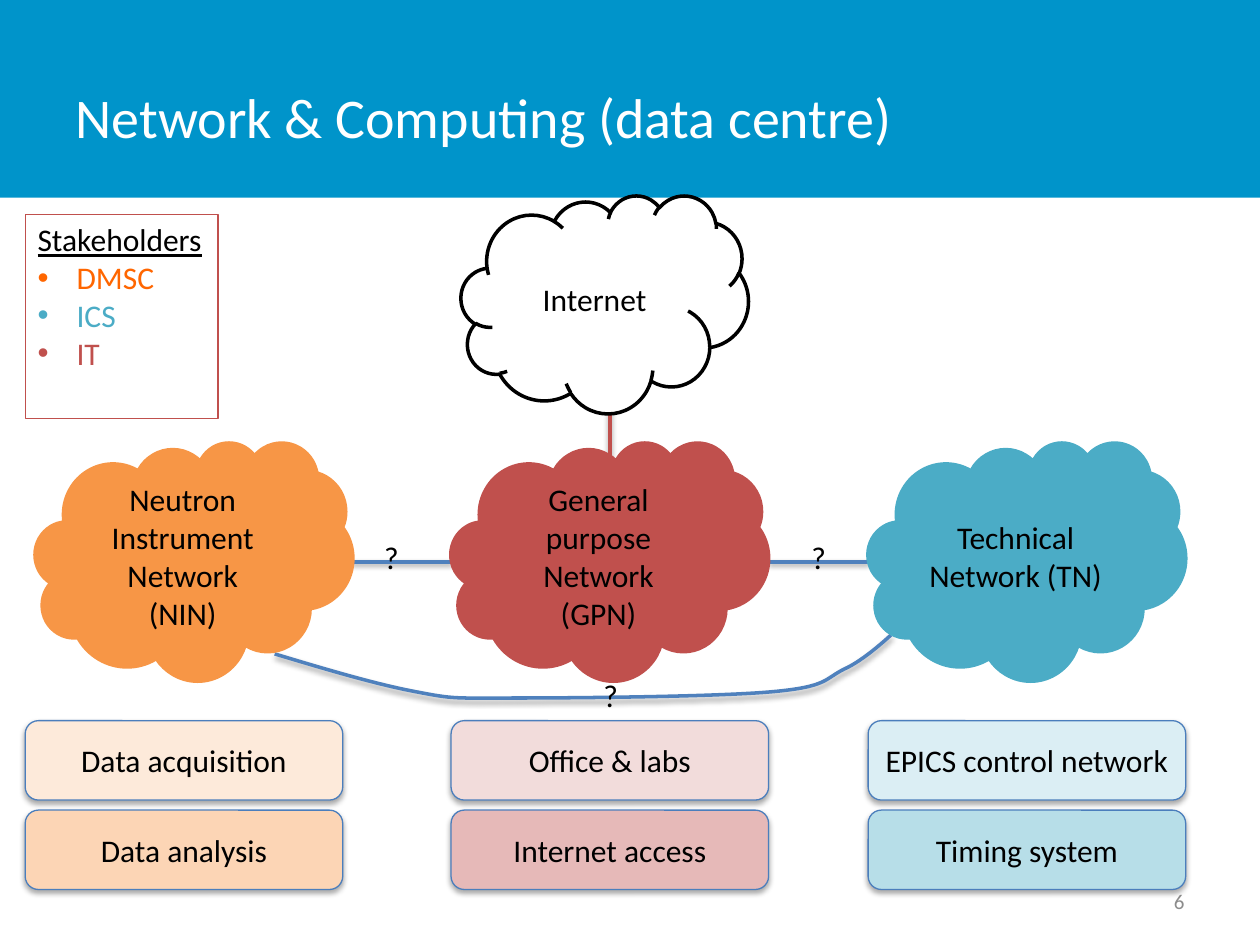
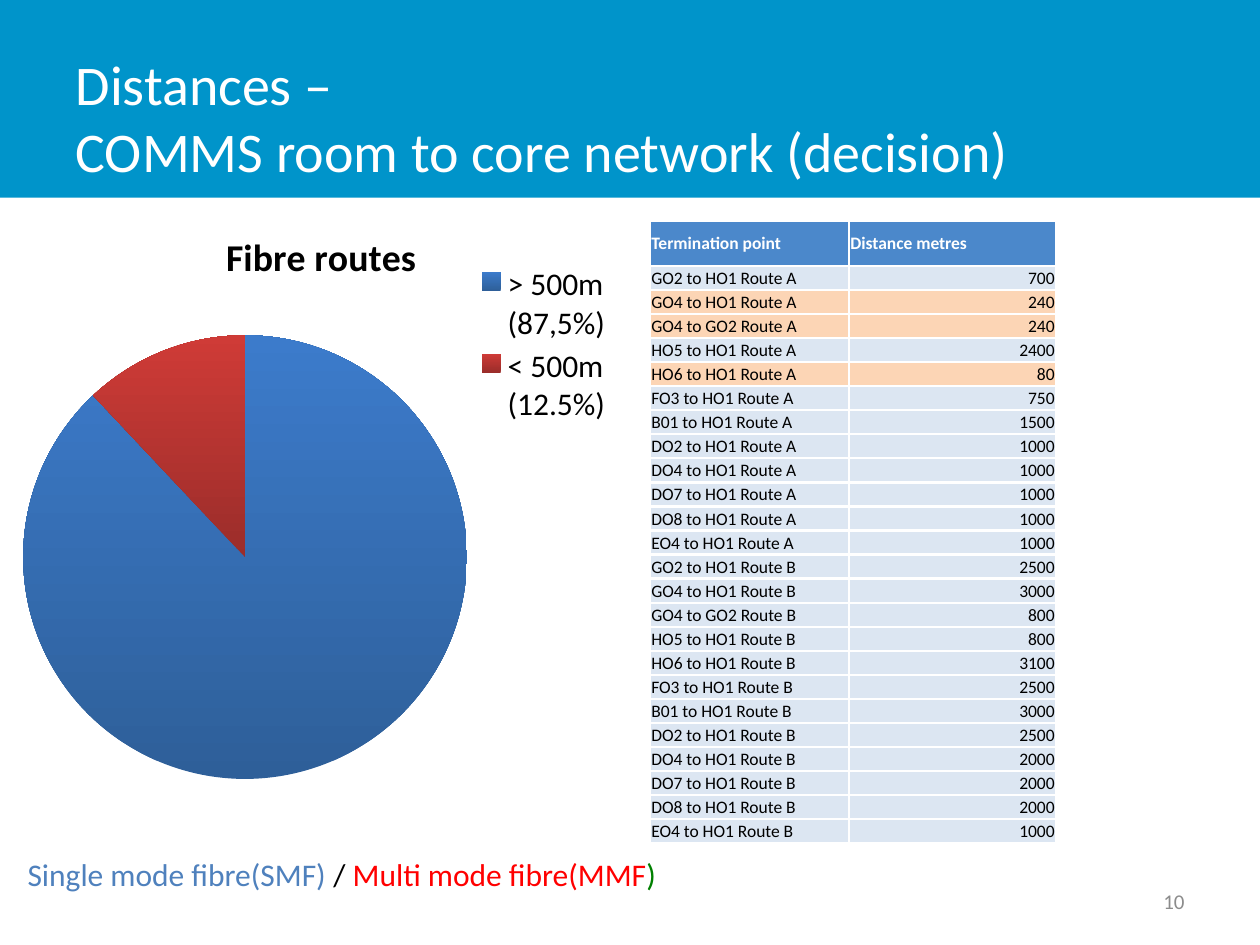
"""Build two slides on network zones and fibre distances."""
import pptx
import pptx.chart.data
import pptx.dml.color
import pptx.enum.chart
import pptx.enum.shapes
import pptx.enum.text
import pptx.oxml
import pptx.oxml.ns
import pptx.util
from lxml import etree

ALIGN = pptx.enum.text.PP_ALIGN
MIDDLE = pptx.enum.text.MSO_ANCHOR.MIDDLE
SHAPE = pptx.enum.shapes.MSO_SHAPE
STRAIGHT = pptx.enum.shapes.MSO_CONNECTOR.STRAIGHT
qn = pptx.oxml.ns.qn
BLACK, WHITE, GREY, BAND = "000000", "FFFFFF", "8C8C8C", "0094CA"
ORANGE, RED, TEAL, BLUE = "F79646", "C0504D", "4BACC6", "4F81BD"


def tint(shade):
    """Turn a hex string into a colour."""
    return pptx.dml.color.RGBColor.from_string(shade)


def write(para, text, shade=BLACK, size=18, bold=False, underline=False):
    """Add one formatted run to a paragraph."""
    span = para.add_run()
    span.text = text
    span.font.name = "Calibri"
    span.font.size = pptx.util.Pt(size)
    span.font.color.rgb = tint(shade)
    span.font.bold = bold
    span.font.underline = underline


deck = pptx.Presentation()
deck.slide_width = pptx.util.Inches(10)
deck.slide_height = pptx.util.Inches(7.5)
column = deck.slide_width // 1000
row = deck.slide_height // 750
layout = deck.slide_layouts.get_by_name("Title Only")

pages = []
for title_lines, number in [
    (["Network & Computing (data centre)"], "6"),
    (["Distances –", "COMMS room to core network (decision)"], "10"),
]:
    page = deck.slides.add_slide(layout)
    pages.append(page)
    title = page.shapes.title
    title.left, title.top = 50 * column, 30 * row
    title.width, title.height = 781 * column, 125 * row
    title.text_frame.vertical_anchor = MIDDLE
    para = title.text_frame.paragraphs[0]
    para.alignment = ALIGN.LEFT
    for index, line in enumerate(title_lines):
        if index:
            para.add_line_break()
        write(para, line, WHITE, 32)
    box = page.shapes.add_textbox(717 * column, 695 * row, 233 * column, 40 * row)
    box.text_frame.word_wrap = True
    box.text_frame.vertical_anchor = MIDDLE
    box.text_frame.paragraphs[0].alignment = ALIGN.RIGHT
    write(box.text_frame.paragraphs[0], number, GREY, 12)
network, distances = pages

band = network.shapes.add_shape(SHAPE.RECTANGLE, 0, 0, deck.slide_width, 157 * row)
band.shadow.inherit = False
band.fill.solid()
band.fill.fore_color.rgb = tint(BAND)
band.line.fill.background()
layout.shapes._spTree.insert(2, band._element)

shadowed = []
for x1, y1, x2, y2, shade in [
    (279, 446, 359, 446, BLUE),
    (484, 312, 484, 362, RED),
    (690, 446, 610, 446, BLUE),
]:
    link = network.shapes.add_connector(STRAIGHT, x1 * column, y1 * row, x2 * column, y2 * row)
    link.line.color.rgb = tint(shade)
    link.line.width = pptx.util.Pt(2)
    shadowed.append((link, 20000, 38000))

bends = [
    (258, 531), (298, 543), (330, 549), (361, 555), (360, 554), (407, 554),
    (454, 554), (569, 553), (613, 549), (657, 545), (654, 539), (670, 531),
    (686, 524), (707, 504), (707, 504),
]
builder = network.shapes.build_freeform(218, 519, scale=(column, row))
builder.add_line_segments(bends, close=False)
detour = builder.convert_to_shape()
detour.fill.background()
detour.line.color.rgb = tint(BLUE)
detour.line.width = pptx.util.Pt(2)
shadowed.append((detour, 20000, 38000))
segments = list(detour._element.iter(qn("a:lnTo")))
outline = segments[0].getparent()
for start in range(0, len(segments), 3):
    bezier = etree.SubElement(outline, qn("a:cubicBezTo"))
    for segment in segments[start:start + 3]:
        bezier.append(segment[0])
        outline.remove(segment)

clouds = [(366, 155, 228, 173, WHITE, BLACK, ["Internet"])]
zone_boxes = []
for cloud_left, box_left, shade, name, uses in [
    (358, 358, RED, ["General purpose Network", "(GPN)"],
     [("Office & labs", "F2DCDB"), ("Internet access", "E6B9B8")]),
    (28, 20, ORANGE, ["Neutron Instrument Network (NIN)"],
     [("Data acquisition", "FDEADA"), ("Data analysis", "FCD5B5")]),
    (689, 689, TEAL, ["Technical Network (TN)"],
     [("EPICS control network", "DBEEF4"), ("Timing system", "B7DEE8")]),
]:
    clouds.append((cloud_left, 351, 252, 189, shade, shade, name))
    for level, (use, pale) in enumerate(uses):
        zone_boxes.append((box_left, 572 + 71 * level, 252, 63, pale, "4B7EBC", [use]))

for kind, weight, items in [(SHAPE.CLOUD, 2, clouds), (SHAPE.ROUNDED_RECTANGLE, 0.75, zone_boxes)]:
    for left, top, width, height, fill, edge, lines in items:
        box = network.shapes.add_shape(kind, left * column, top * row, width * column, height * row)
        box.fill.solid()
        box.fill.fore_color.rgb = tint(fill)
        box.line.color.rgb = tint(edge)
        box.line.width = pptx.util.Pt(weight)
        if kind == SHAPE.CLOUD:
            box.shadow.inherit = False
        else:
            shadowed.append((box, 23000, 35000))
        frame = box.text_frame
        frame.word_wrap = True
        frame.vertical_anchor = MIDDLE
        for index, line in enumerate(lines):
            para = frame.add_paragraph() if index else frame.paragraphs[0]
            para.alignment = ALIGN.CENTER
            write(para, line)

for item, drop, opacity in shadowed:
    effects = etree.SubElement(item._element.spPr, qn("a:effectLst"))
    shadow = etree.SubElement(effects, qn("a:outerShdw"), blurRad="40000", dist=str(drop),
                              dir="5400000", rotWithShape="0")
    shade = etree.SubElement(shadow, qn("a:srgbClr"), val=BLACK)
    etree.SubElement(shade, qn("a:alpha"), val=str(opacity))

stakeholders = network.shapes.add_textbox(20 * column, 170 * row, 153 * column, 162 * row)
stakeholders.line.color.rgb = tint(RED)
stakeholders.line.width = pptx.util.Pt(0.75)
frame = stakeholders.text_frame
frame.word_wrap = False
write(frame.paragraphs[0], "Stakeholders", underline=True)
for name, shade in [("DMSC", "FF6600"), ("ICS", TEAL), ("IT", RED)]:
    para = frame.add_paragraph()
    properties = para._p.get_or_add_pPr()
    properties.set("marL", str(31 * column))
    properties.set("indent", str(-31 * column))
    etree.SubElement(properties, qn("a:buFont"), typeface="Arial")
    etree.SubElement(properties, qn("a:buChar"), char="•")
    write(para, name, shade)

fibre_key = [("Single mode fibre(SMF) ", BLUE), ("/ ", BLACK),
             ("Multi mode fibre(MMF", "FF0000"), (")", "008000")]
for page, left, top, width, spans in [
    (network, 295, 422, 32, [("?", BLACK)]),
    (network, 634, 422, 32, [("?", BLACK)]),
    (network, 469, 532, 32, [("?", BLACK)]),
    (distances, 12, 674, 525, fibre_key),
]:
    box = page.shapes.add_textbox(left * column, top * row, width * column, 40 * row)
    box.text_frame.word_wrap = False
    for text, shade in spans:
        write(box.text_frame.paragraphs[0], text, shade)

routes = pptx.chart.data.CategoryChartData()
routes.categories = ["> 500m (87,5%)", "< 500m (12.5%)"]
routes.add_series("Fibre routes", (88, 12))
chart = distances.shapes.add_chart(pptx.enum.chart.XL_CHART_TYPE.PIE, 3 * column, 162 * row,
                                   504 * column, 496 * row, routes).chart
chart.font.name = "Calibri"
chart.font.size = pptx.util.Pt(18)
chart.font.color.rgb = tint(BLACK)
chart.has_title = True
write(chart.chart_title.text_frame.paragraphs[0], "Fibre routes", size=21.6, bold=True)
chart.has_legend = True
chart.legend.position = pptx.enum.chart.XL_LEGEND_POSITION.RIGHT
chart.legend.include_in_layout = False
pie = chart.plots[0]
pie.vary_by_categories = True
for index, (dark, light) in enumerate([("2E5F99", "3C7BCB"), ("9B2D2A", "CF3B37")]):
    fill = pie.series[0].points[index].format.fill
    fill.gradient()
    fill.gradient_angle = 90
    for stop, shade in zip(fill.gradient_stops, (dark, light)):
        stop.color.rgb = tint(shade)

plot_area = chart._chartSpace.chart.plotArea
for old in plot_area.findall(qn("c:layout")):
    plot_area.remove(old)
for parent, position, shares in [
    (plot_area, 0, {"x": 0.03, "y": 0.21, "w": 0.7, "h": 0.71}),
    (chart.legend._element, 1, {"x": 0.71, "y": 0.09, "w": 0.28, "h": 0.27}),
]:
    for old in parent.findall(qn("c:layout")):
        parent.remove(old)
    holder = etree.Element(qn("c:layout"))
    parent.insert(position, holder)
    manual = etree.SubElement(holder, qn("c:manualLayout"))
    if parent is plot_area:
        etree.SubElement(manual, qn("c:layoutTarget"), val="inner")
    for side in "xy":
        etree.SubElement(manual, qn(f"c:{side}Mode"), val="edge")
    for side, share in shares.items():
        etree.SubElement(manual, qn(f"c:{side}"), val=str(share))

lengths = {
    "GO2 to HO1": (700, 2500), "GO4 to HO1": (240, 3000), "GO4 to GO2": (240, 800),
    "HO5 to HO1": (2400, 800), "HO6 to HO1": (80, 3100), "FO3 to HO1": (750, 2500),
    "B01 to HO1": (1500, 3000), "DO2 to HO1": (1000, 2500), "DO4 to HO1": (1000, 2000),
    "DO7 to HO1": (1000, 2000), "DO8 to HO1": (1000, 2000), "EO4 to HO1": (1000, 1000),
}
records = [("Termination point", "Distance metres")]
for index, route in enumerate("AB"):
    for name, metres in lengths.items():
        records.append((f"{name} Route {route}", metres[index]))

table = distances.shapes.add_table(len(records), 2, 516 * column, 175 * row,
                                   322 * column, 495 * row).table
table.columns[0].width, table.columns[1].width = 158 * column, 164 * column
for line, record in enumerate(records):
    heading = line == 0
    table.rows[line].height = 36 * row if heading else 459 * row // (len(records) - 1)
    for place, value in enumerate(record):
        cell = table.cell(line, place)
        cell.margin_left = cell.margin_right = column
        cell.margin_top, cell.margin_bottom = row, 0
        cell.vertical_anchor = MIDDLE
        for side in ("lnL", "lnR", "lnT", "lnB"):
            border = etree.SubElement(cell._tc.get_or_add_tcPr(), qn(f"a:{side}"), w="19050")
            paint = etree.SubElement(border, qn("a:solidFill"))
            etree.SubElement(paint, qn("a:srgbClr"), val=WHITE)
        cell.fill.solid()
        if heading:
            shade = "4B88CB"
        else:
            shade = "FCD5B5" if record[1] < 500 else "DCE6F2"
        cell.fill.fore_color.rgb = tint(shade)
        para = cell.text_frame.paragraphs[0]
        para.alignment = ALIGN.RIGHT if place and not heading else ALIGN.LEFT
        write(para, str(value), WHITE if heading else BLACK, 10, bold=heading)

deck.save("out.pptx")
